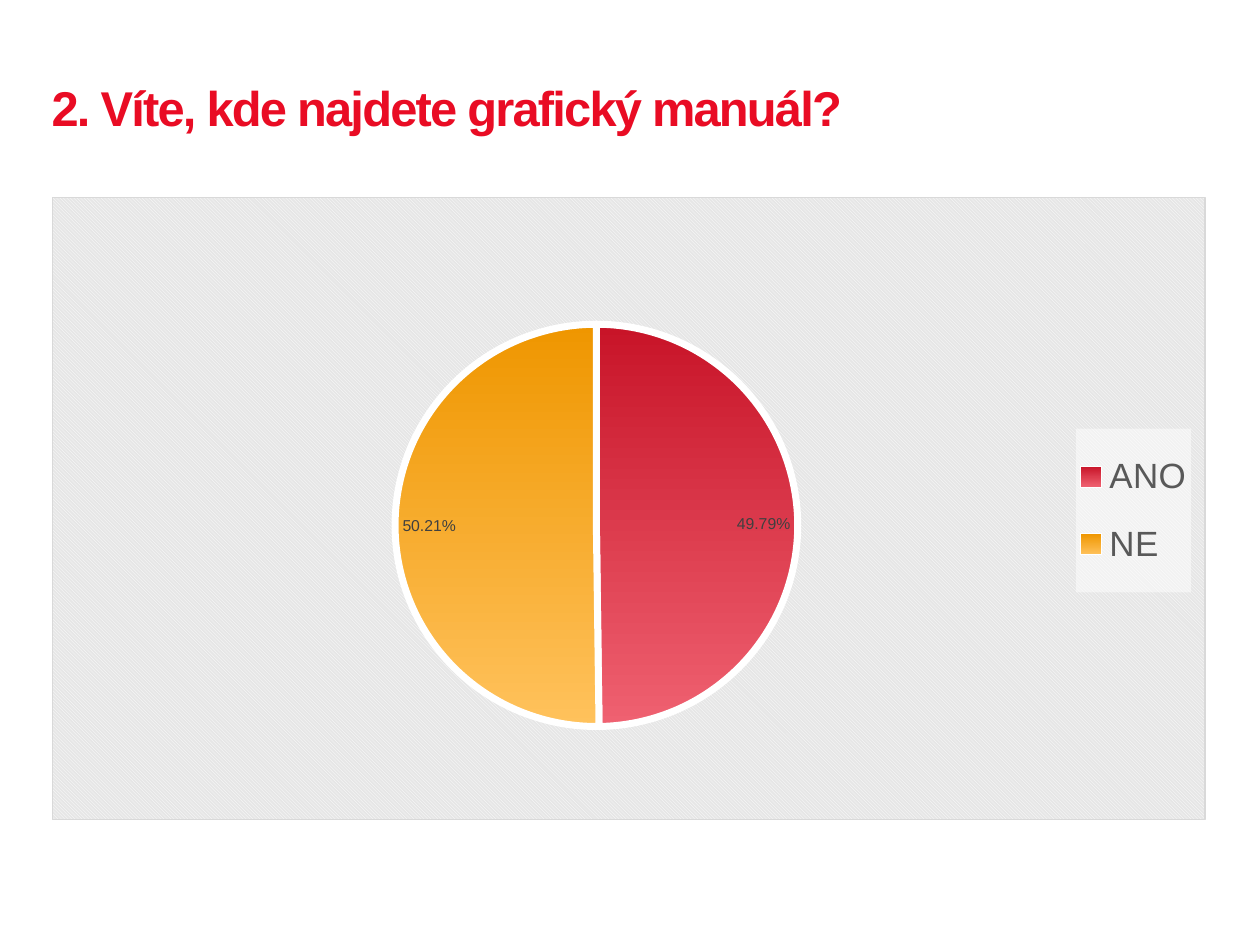
from dataclasses import dataclass

from pptx import Presentation
from pptx.chart.data import CategoryChartData
from pptx.dml.color import RGBColor as Color
from pptx.enum.chart import XL_CHART_TYPE as ChartType
from pptx.enum.chart import XL_LABEL_POSITION as LabelPosition
from pptx.enum.chart import XL_LEGEND_POSITION as LegendPosition
from pptx.enum.text import MSO_ANCHOR as Anchor
from pptx.enum.text import PP_ALIGN as Align
from pptx.oxml import parse_xml
from pptx.oxml.ns import nsdecls
from pptx.util import Inches, Pt


@dataclass(frozen=True)
class Theme:
    """Colours, font and type sizes of the slide."""
    font: str = "Arial"
    title: str = "E90C24"
    legend: str = "595959"
    label: str = "404040"
    white: str = "FFFFFF"
    hatch: str = "E6E6E6"
    border: str = "D9D9D9"
    slices: tuple = (("C81428", "EF6171"), ("EF9600", "FFC25C"))
    title_size: float = 27.9
    title_leading: float = 55
    chart_size: float = 10
    legend_size: float = 20
    label_size: float = 9
    slice_gap: float = 4


THEME = Theme()
TITLE_BOX = (0.41, 0.32, 9.16, 1.37)
CHART_BOX = (0.41, 1.56, 9.16, 4.95)
PLOT_AREA = (0.105, 0.172, 0.734, 0.711)
LEGEND_AREA = (0.888, 0.372, 0.1, 0.263)
ANSWERS = {"ANO": 49.79, "NE": 50.21}


def style_font(font, size, color):
    """Set the typeface, size and colour of a font."""
    font.name = THEME.font
    font.size = Pt(size)
    font.color.rgb = Color.from_string(color)


def chart_xml(tag, content="", attributes=""):
    """Return a chart element with the given content."""
    spaces = nsdecls("c", "a")
    return parse_xml(f"<c:{tag} {spaces} {attributes}>{content}</c:{tag}>")


def manual_layout(area, inner=False):
    """Return a layout element for an area given in chart fractions."""
    target = '<c:layoutTarget val="inner"/>' if inner else ""
    modes = '<c:xMode val="edge"/><c:yMode val="edge"/>'
    sizes = "".join(f'<c:{key} val="{value}"/>' for key, value in zip("xywh", area))
    return chart_xml("layout", f"<c:manualLayout>{target}{modes}{sizes}</c:manualLayout>")


def set_layout(element, layout, before):
    """Replace the layout of an element, placing it before a named child."""
    for old in element.findall(layout.tag):
        element.remove(old)
    element.xpath(before)[0].addprevious(layout)


def add_title(page, box, text):
    """Place the question in the title placeholder."""
    title = page.shapes.title
    title.left, title.top, title.width, title.height = map(Inches, box)
    frame = title.text_frame
    frame.margin_left = frame.margin_top = frame.margin_right = frame.margin_bottom = 0
    frame.vertical_anchor = Anchor.TOP
    frame.word_wrap = True
    para = frame.paragraphs[0]
    para.alignment = Align.LEFT
    para.line_spacing = Pt(THEME.title_leading)
    span = para.add_run()
    span.text = text
    span.font.bold = True
    style_font(span.font, THEME.title_size, THEME.title)
    span.font._element.set("spc", "-100")


def style_background(chart):
    """Give the chart a hatched ground and a thin border."""
    ground = (
        f'<a:pattFill prst="dkDnDiag"><a:fgClr><a:srgbClr val="{THEME.white}"/></a:fgClr>'
        f'<a:bgClr><a:srgbClr val="{THEME.hatch}"/></a:bgClr></a:pattFill>'
        f'<a:ln w="{Pt(0.75)}"><a:solidFill><a:srgbClr val="{THEME.border}"/></a:solidFill></a:ln>'
    )
    chart._chartSpace.xpath("c:chart")[0].addnext(chart_xml("spPr", ground))


def style_slices(series):
    """Fill the slices with gradients and separate them with white lines."""
    for index, colors in enumerate(THEME.slices):
        look = series.points[index].format
        look.fill.gradient()
        look.fill.gradient_angle = 270
        for stop, color, position in zip(look.fill.gradient_stops, colors, (0, 1)):
            stop.color.rgb = Color.from_string(color)
            stop.position = position
        look.line.color.rgb = Color.from_string(THEME.white)
        look.line.width = Pt(THEME.slice_gap)
    points = series._element.xpath("c:dPt")
    points[0].addprevious(chart_xml("explosion", attributes='val="10"'))
    for point in points:
        point.xpath("c:spPr")[0].addprevious(chart_xml("explosion", attributes='val="0"'))


def style_labels(plot):
    """Show percentages inside the edge of the slices."""
    plot.has_data_labels = True
    labels = plot.data_labels
    labels.show_percentage = True
    labels.show_value = False
    labels.number_format = "0.00%"
    labels.number_format_is_linked = False
    labels.position = LabelPosition.INSIDE_END
    style_font(labels.font, THEME.label_size, THEME.label)


def style_legend(chart, area):
    """Place the legend on a translucent white panel."""
    chart.has_legend = True
    legend = chart.legend
    legend.position = LegendPosition.RIGHT
    legend.include_in_layout = False
    style_font(legend.font, THEME.legend_size, THEME.legend)
    element = legend._element
    set_layout(element, manual_layout(area), "c:overlay")
    panel = (
        f'<a:solidFill><a:srgbClr val="{THEME.white}"><a:alpha val="50000"/></a:srgbClr>'
        "</a:solidFill><a:ln><a:noFill/></a:ln>"
    )
    element.xpath("c:txPr")[0].addprevious(chart_xml("spPr", panel))


def add_answer_chart(page, box, answers):
    """Place the pie chart of the answers."""
    data = CategoryChartData()
    data.categories = list(answers)
    data.add_series("Series 1", list(answers.values()))
    chart = page.shapes.add_chart(ChartType.PIE, *map(Inches, box), data).chart
    chart.has_title = False
    style_font(chart.font, THEME.chart_size, "000000")
    plot = chart.plots[0]
    plot.vary_by_categories = True
    set_layout(chart._chartSpace.xpath("c:chart/c:plotArea")[0],
               manual_layout(PLOT_AREA, inner=True), "c:pieChart")
    style_background(chart)
    style_slices(plot.series[0])
    style_labels(plot)
    style_legend(chart, LEGEND_AREA)


def main():
    """Build and save the deck."""
    deck = Presentation()
    deck.slide_width, deck.slide_height = Inches(10), Inches(7.5)
    page = deck.slides.add_slide(deck.slide_layouts[5])
    add_title(page, TITLE_BOX, "2. Víte, kde najdete grafický manuál?")
    add_answer_chart(page, CHART_BOX, ANSWERS)
    deck.save("out.pptx")


if __name__ == "__main__":
    main()
